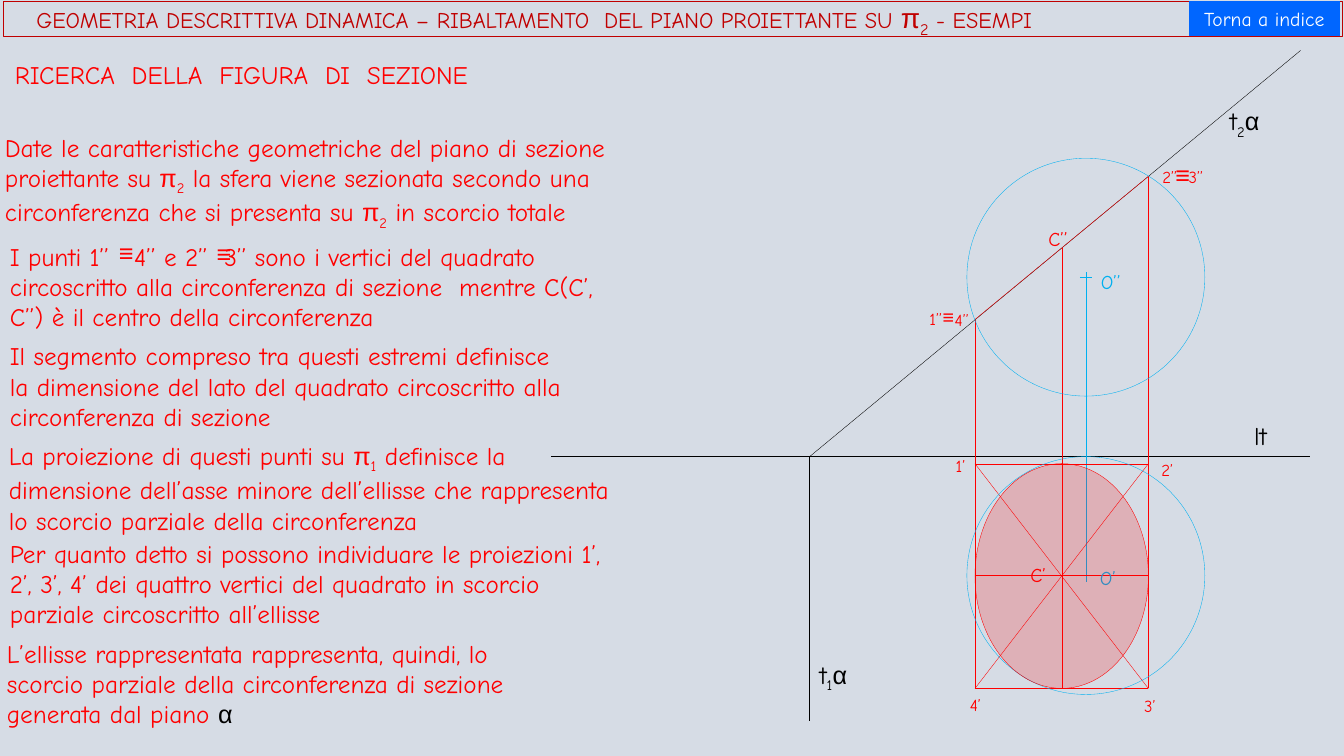
from lxml import etree
from pptx import Presentation
from pptx.dml.color import RGBColor
from pptx.enum.shapes import MSO_CONNECTOR, MSO_SHAPE
from pptx.enum.text import MSO_ANCHOR, MSO_AUTO_SIZE, PP_ALIGN
from pptx.oxml.ns import qn
from pptx.util import Inches, Pt

BACKGROUND = RGBColor(0xD6, 0xDC, 0xE5)
BLACK = RGBColor(0, 0, 0)
WHITE = RGBColor(255, 255, 255)
RED = RGBColor(255, 0, 0)
DARK_RED = RGBColor(0xC0, 0, 0)
CYAN = RGBColor(0, 0xB0, 0xF0)
BLUE = RGBColor(0, 0x66, 0xFF)
HAIRLINE = Pt(0.25)

prs = Presentation()
prs.slide_width, prs.slide_height = Inches(13.33), Inches(7.5)
s = prs.slides.add_slide(prs.slide_layouts[6])
s.background.fill.solid()
s.background.fill.fore_color.rgb = BACKGROUND


def write(tf, text, size=18, color=RED, symbol_size=None, align=PP_ALIGN.LEFT):
    """Fill tf; parts between bars that are a lone symbol or digit become Arial or subscript."""
    tf.word_wrap = True
    p = tf.paragraphs[0]
    p.alignment = align
    for part in text.split("|"):
        r = p.add_run()
        r.text = part
        symbol, subscript = part in ("π", "α", "≡"), part in ("1", "2")
        r.font.name = "Arial" if symbol else "Comic Neue"
        r.font.size = Pt(symbol_size if symbol_size and (symbol or subscript) else size)
        r.font.color.rgb = BLACK if part == "α" else color
        if subscript:
            r.font._element.set("baseline", "-25000")
    return p


def add_shape(kind, x, y, w, h, fill=None, line=None):
    sp = s.shapes.add_shape(kind, Inches(x), Inches(y), Inches(w), Inches(h))
    sp.shadow.inherit = False
    if fill is None:
        sp.fill.background()
    else:
        sp.fill.solid()
        sp.fill.fore_color.rgb = fill
    if line is None:
        sp.line.fill.background()
    else:
        sp.line.color.rgb = line
        sp.line.width = HAIRLINE
    return sp


# Construction lines: x1, y1, x2, y2
left, centre, right = 9.67, 10.53, 11.39
top, middle, bottom = 4.6, 5.71, 6.83
ground_y, trace_x, sphere_x = 4.53, 8.03, 10.77
lines = {
    BLACK: [
        (5.47, ground_y, 12.99, ground_y),
        (trace_x, ground_y, trace_x, 7.15),
        (trace_x, ground_y, 12.9, 0.5),
    ],
    CYAN: [
        (sphere_x, 5.77, sphere_x, 2.7),
        (sphere_x - 0.06, middle, sphere_x + 0.06, middle),
        (sphere_x - 0.06, 2.75, sphere_x + 0.06, 2.75),
    ],
    RED: [
        (left, 3.17, right, 1.75),
        (left, 3.17, left, bottom),
        (centre, 2.46, centre, bottom),
        (right, 1.75, right, bottom),
        *[(left, y, right, y) for y in (top, middle, bottom)],
        (left, top, right, bottom),
        (right, top, left, bottom),
    ],
}
for color, segments in lines.items():
    for segment in segments:
        c = s.shapes.add_connector(MSO_CONNECTOR.STRAIGHT, *[Inches(v) for v in segment])
        c.line.color.rgb = color
        c.line.width = HAIRLINE
        etree.SubElement(c._element.spPr, qn("a:effectLst"))

# Two projections of the sphere
for y in (1.57, ground_y):
    add_shape(MSO_SHAPE.OVAL, 9.59, y, 2.36, 2.36, line=CYAN)

# Texts: x, y, width, height, text, size, colour
texts = [
    (12.34, 4.12, 0.56, 0.4, "lt", 18, BLACK),
    (8.03, 6.49, 0.56, 0.4, "t|1|α", 18, BLACK),
    (12.1, 1, 0.86, 0.4, "t|2|α", 18, BLACK),
    (11.69, 1.61, 0.39, 0.3, "3’’", 12, RED),
    (9.37, 3.02, 0.39, 0.3, "4’’", 12, RED),
    (9.12, 3.01, 0.39, 0.3, "1’’", 12, RED),
    (11.43, 1.61, 0.39, 0.3, "2’’", 12, RED),
    (11.56, 1.53, 0.24, 0.4, "≡", 18, RED),
    (9.25, 2.98, 0.24, 0.34, "≡", 14, RED),
    (10.81, 5.57, 0.45, 0.34, "O’", 14, CYAN),
    (10.82, 2.63, 0.47, 0.34, "O’’", 14, CYAN),
    (10.12, 5.54, 0.45, 0.34, "C’", 14, RED),
    (10.3, 2.2, 0.47, 0.34, "C’’", 14, RED),
    (9.52, 6.84, 0.39, 0.3, "4’", 12, RED),
    (9.38, 4.47, 0.39, 0.3, "1’", 12, RED),
    (11.42, 4.51, 0.39, 0.3, "2’", 12, RED),
    (11.25, 6.85, 0.39, 0.3, "3’", 12, RED),
    (0.05, 0.54, 6.62, 0.4, "RICERCA  DELLA  FIGURA  DI  SEZIONE", 18, RED),
    (-0.05, 1.26, 6.82, 1.01,
     "Date le caratteristiche geometriche del piano di sezione proiettante su |π|2| la sfera "
     "viene sezionata secondo una circonferenza che si presenta su |π|2| in scorcio totale", 18, RED),
    (0, 2.34, 6.34, 1.01,
     "I punti 1’’   4’’ e 2’’  3’’ sono i vertici del quadrato circoscritto alla circonferenza "
     "di sezione  mentre C(C’, C’’) è il centro della circonferenza", 18, RED),
    (2.05, 2.32, 0.24, 0.4, "≡", 18, RED),
    (1.08, 2.31, 0.24, 0.4, "≡", 18, RED),
    (0, 3.33, 5.73, 1.01,
     "Il segmento compreso tra questi estremi definisce la dimensione del lato del quadrato "
     "circoscritto alla circonferenza di sezione", 18, RED),
    (-0.01, 4.32, 6.34, 1.01,
     "La proiezione di questi punti su |π|1| definisce la dimensione dell’asse minore "
     "dell’ellisse che rappresenta lo scorcio parziale della circonferenza", 18, RED),
    (0, 5.29, 6.11, 1.01,
     "Per quanto detto si possono individuare le proiezioni 1’, 2’, 3’, 4’ dei quattro vertici "
     "del quadrato in scorcio parziale circoscritto all’ellisse", 18, RED),
    (-0.03, 6.28, 5.59, 1.01,
     "L’ellisse rappresentata rappresenta, quindi, lo scorcio parziale della circonferenza "
     "di sezione generata dal piano |α", 18, RED),
]
for x, y, w, h, text, size, color in texts:
    tf = s.shapes.add_textbox(Inches(x), Inches(y), Inches(w), Inches(h)).text_frame
    tf.auto_size = MSO_AUTO_SIZE.SHAPE_TO_FIT_TEXT
    write(tf, text, size=size, color=color)

# Section ellipse, tinted over the lines and labels
section = add_shape(MSO_SHAPE.OVAL, left, top, right - left, bottom - top, fill=RED, line=RED)
tint = section.fill._xPr.find(qn("a:solidFill"))[0]
etree.SubElement(tint, qn("a:alpha"), val="20000")

# Title bar and index button
bar = add_shape(MSO_SHAPE.RECTANGLE, 0.03, 0.01, 13.28, 0.35, line=DARK_RED)
bar.text_frame.vertical_anchor = MSO_ANCHOR.MIDDLE
bar.text_frame.margin_left = Inches(0.33)
p = write(bar.text_frame,
          "GEOMETRIA DESCRITTIVA DINAMICA – RIBALTAMENTO  DEL PIANO PROIETTANTE SU |π|2| - ESEMPI",
          size=16, color=DARK_RED, symbol_size=20)
p.line_spacing = 0.9

button = add_shape(MSO_SHAPE.ACTION_BUTTON_CUSTOM, 11.79, 0.01, 1.5, 0.35, fill=BLUE)
button.text_frame.vertical_anchor = MSO_ANCHOR.MIDDLE
write(button.text_frame, "Torna a indice", size=14, color=WHITE, align=PP_ALIGN.CENTER)

prs.save("out.pptx")
